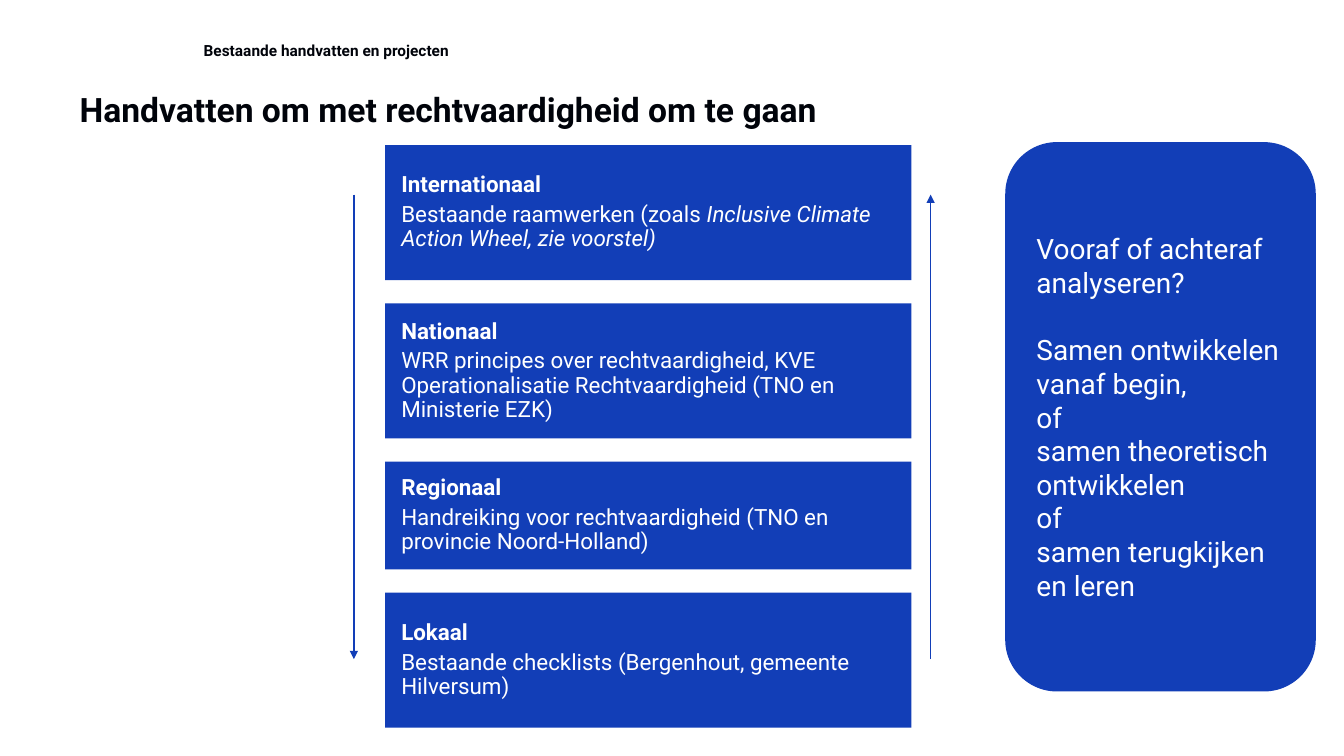
from dataclasses import dataclass

import lxml.etree
import pptx
import pptx.dml.color
import pptx.enum.shapes
import pptx.enum.text
import pptx.oxml.ns
import pptx.util

Inches = pptx.util.Inches
Pt = pptx.util.Pt
Anchor = pptx.enum.text.MSO_ANCHOR
Shape = pptx.enum.shapes.MSO_SHAPE


@dataclass(frozen=True)
class Theme:
    font: str = "Roboto"
    blue: str = "123EB7"
    white: str = "FFFFFF"
    ink: str = "00030A"
    label: int = 11
    title: int = 24
    level: int = 16
    panel: int = 20


@dataclass(frozen=True)
class Level:
    name: str
    plain: str
    height: float = 1.34
    slanted: str = ""


@dataclass(frozen=True)
class Arrow:
    left: float
    start: float
    end: float


THEME = Theme()

LEVELS = [
    Level("Internationaal", "Bestaande raamwerken (zoals ",
          slanted="Inclusive Climate Action Wheel, zie voorstel)"),
    Level("Nationaal", "WRR principes over rechtvaardigheid, KVE "
          "Operationalisatie Rechtvaardigheid (TNO en Ministerie EZK)"),
    Level("Regionaal", "Handreiking voor rechtvaardigheid (TNO en provincie Noord-Holland)",
          height=1.07),
    Level("Lokaal", "Bestaande checklists (Bergenhout, gemeente Hilversum)"),
]
LEVEL_TOP, LEVEL_GAP = 1.44, 0.23

ARROWS = [Arrow(3.51, 1.93, 6.54), Arrow(9.23, 6.54, 1.93)]

PANEL = [
    "Vooraf of achteraf analyseren?",
    "Samen ontwikkelen vanaf begin,",
    "of",
    "samen theoretisch ontwikkelen",
    "of",
    "samen terugkijken en leren",
]


def style(run, size: int, color: str, bold: bool = False) -> None:
    run.font.name = THEME.font
    run.font.size = Pt(size)
    run.font.bold = bold
    run.font.color.rgb = pptx.dml.color.RGBColor.from_string(color)


def set_frame(frame, anchor, margins: tuple) -> None:
    """Set wrapping, anchor and the left, top, right and bottom margins."""
    frame.word_wrap = True
    frame.vertical_anchor = anchor
    (frame.margin_left, frame.margin_top,
     frame.margin_right, frame.margin_bottom) = map(Inches, margins)


def add_heading(slide, text: str, place: tuple, size: int, anchor, margins: tuple) -> None:
    frame = slide.shapes.add_textbox(*map(Inches, place)).text_frame
    set_frame(frame, anchor, margins)
    frame.text = text
    line = frame.paragraphs[0]
    line.line_spacing = 0.9
    line.space_after = Pt(6)
    style(line.runs[0], size, THEME.ink, bold=True)


def add_block(slide, kind, place: tuple):
    """Add a plain blue shape and return its text frame."""
    block = slide.shapes.add_shape(kind, *map(Inches, place))
    block.shadow.inherit = False
    block.fill.solid()
    block.fill.fore_color.rgb = pptx.dml.color.RGBColor.from_string(THEME.blue)
    block.line.fill.background()
    set_frame(block.text_frame, Anchor.MIDDLE, (0.16,) * 4)
    return block.text_frame


def add_level(slide, level: Level, top: float) -> None:
    frame = add_block(slide, Shape.RECTANGLE, (3.82, top, 5.22, level.height))
    frame.text = f"{level.name}\n{level.plain}"
    head, body = frame.paragraphs
    if level.slanted:
        run = body.add_run()
        run.text = level.slanted
        run.font.italic = True
    body.space_before = Pt(2)
    for line in (head, body):
        line.alignment = pptx.enum.text.PP_ALIGN.LEFT
        line.line_spacing = 0.9
        line.space_after = Pt(2)
        for run in line.runs:
            style(run, THEME.level, THEME.white, bold=line is head)


def add_arrow(slide, arrow: Arrow) -> None:
    left = Inches(arrow.left)
    line = slide.shapes.add_connector(
        pptx.enum.shapes.MSO_CONNECTOR.STRAIGHT,
        left, Inches(arrow.start), left, Inches(arrow.end))
    line.line.width = Pt(1)
    line.line.color.rgb = pptx.dml.color.RGBColor.from_string(THEME.blue)
    qn = pptx.oxml.ns.qn
    props = line._element.spPr
    lxml.etree.SubElement(props.find(qn("a:ln")), qn("a:tailEnd"), type="triangle")
    lxml.etree.SubElement(props, qn("a:effectLst"))


def add_panel(slide) -> None:
    frame = add_block(slide, Shape.ROUNDED_RECTANGLE, (9.97, 1.41, 3.08, 5.45))
    frame.text = "\n".join(PANEL)
    for line in frame.paragraphs:
        line.alignment = pptx.enum.text.PP_ALIGN.LEFT
        style(line.runs[0], THEME.panel, THEME.white)
    frame.paragraphs[1].space_before = Pt(24)


def main() -> None:
    deck = pptx.Presentation()
    deck.slide_width, deck.slide_height = Inches(13.33), Inches(7.5)
    slide = deck.slides.add_slide(deck.slide_layouts[6])
    add_heading(slide, "Bestaande handvatten en projecten", (2.02, 0.36, 10.53, 0.27),
                THEME.label, Anchor.BOTTOM, (0, 0.08, 0, 0.04))
    add_heading(slide, "Handvatten om met rechtvaardigheid om te gaan",
                (0.79, 0.93, 11.86, 0.51), THEME.title, Anchor.TOP, (0,) * 4)
    top = LEVEL_TOP
    for level in LEVELS:
        add_level(slide, level, top)
        top += level.height + LEVEL_GAP
    for arrow in ARROWS:
        add_arrow(slide, arrow)
    add_panel(slide)
    deck.save("out.pptx")


if __name__ == "__main__":
    main()
